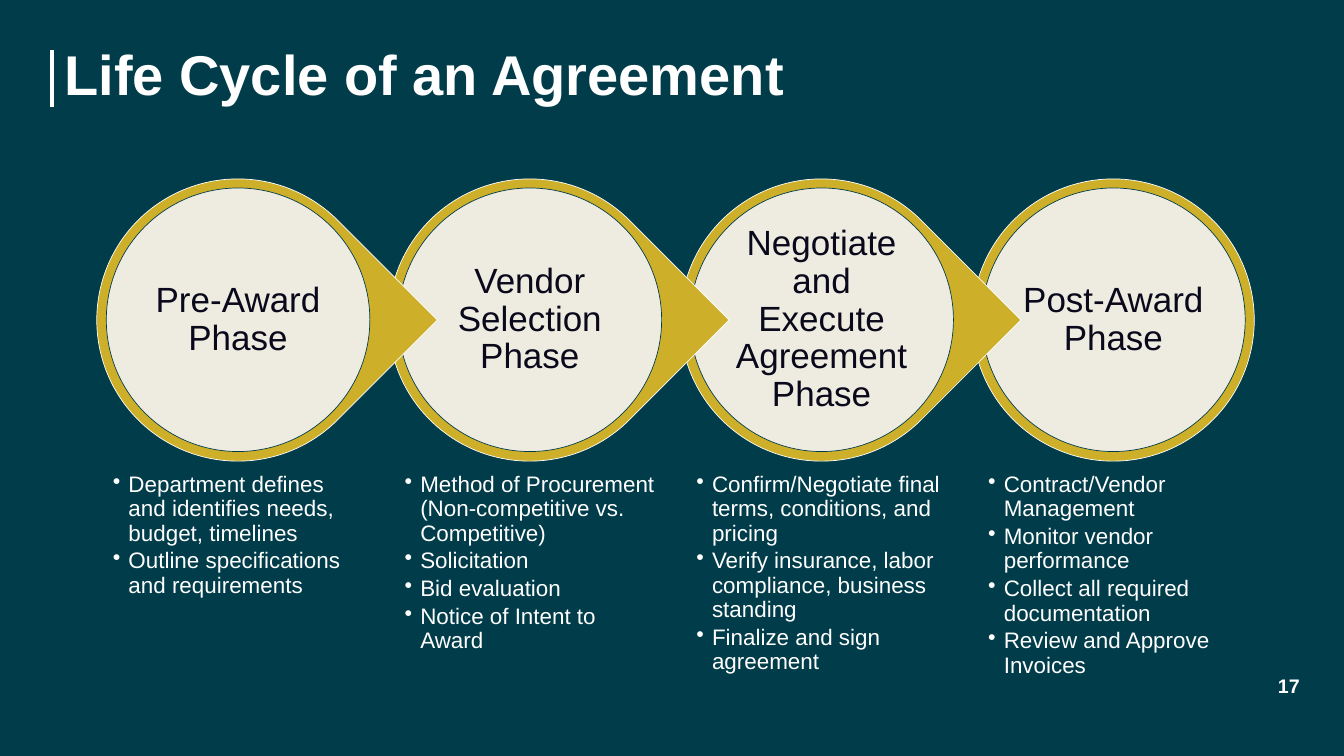
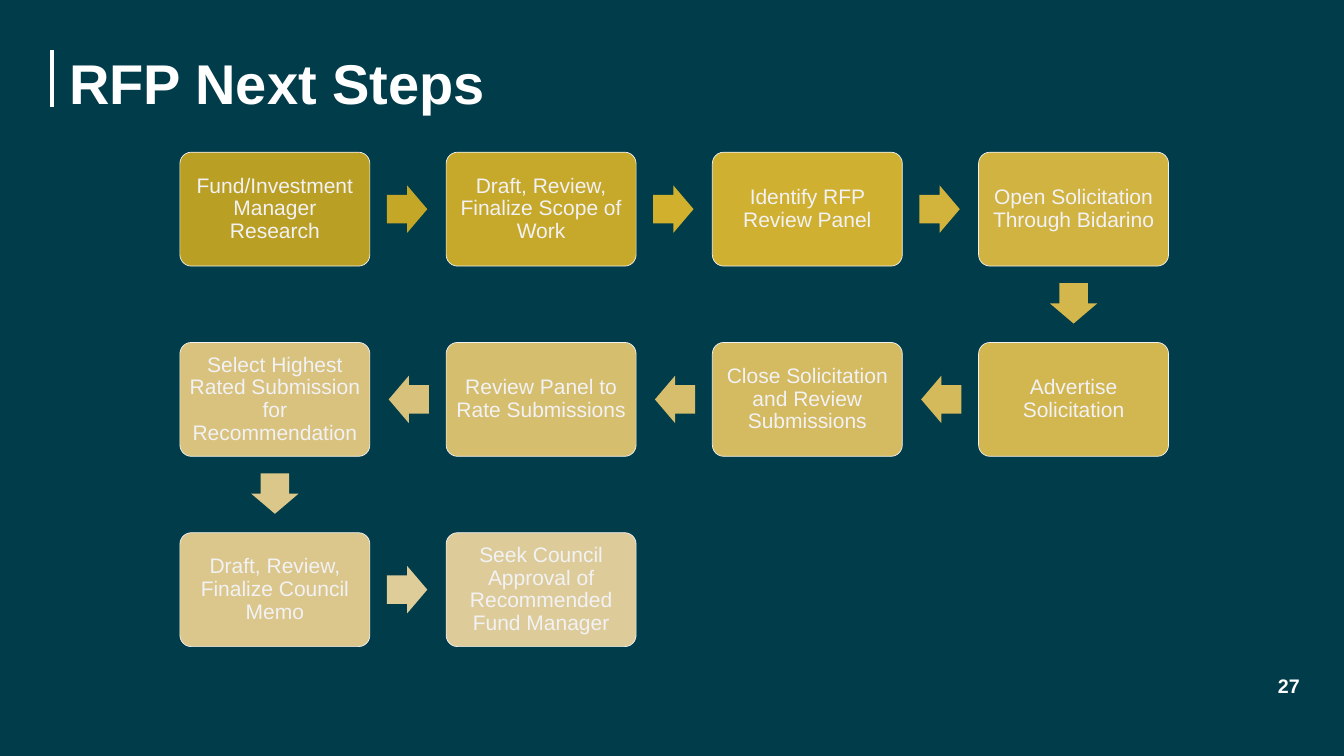
from lxml import etree
from pptx import Presentation, util as u
from pptx.dml.color import RGBColor
from pptx.enum import shapes, text
from pptx.oxml.ns import qn

# Shared style
FONT = "Arial"
TEAL, WHITE, PALE, GOLD, INK = "003C49", "FFFFFF", "F2F2F5", "CDAF29", "0A091B"
KIND, ALIGN, ANCHOR = shapes.MSO_SHAPE, text.PP_ALIGN, text.MSO_ANCHOR

# Slide 1: phases, left to right, with their tasks
PHASES = [
    ("Pre-Award Phase", [
        "Department defines and identifies needs, budget, timelines",
        "Outline specifications and requirements"]),
    ("Vendor Selection Phase", [
        "Method of Procurement (Non-competitive vs. Competitive)",
        "Solicitation", "Bid evaluation", "Notice of Intent to Award"]),
    ("Negotiate and Execute Agreement Phase", [
        "Confirm/Negotiate final terms, conditions, and pricing",
        "Verify insurance, labor compliance, business standing",
        "Finalize and sign agreement"]),
    ("Post-Award Phase", [
        "Contract/Vendor Management", "Monitor vendor performance",
        "Collect all required documentation", "Review and Approve Invoices"]),
]

# Slide 2: step, box colour, colour of the arrow to the next step
STEPS = [
    ("Fund/Investment Manager Research", "BA9F25", "C4A727"),
    ("Draft, Review, Finalize Scope of Work", "C6A82A", "D0B02D"),
    ("Identify RFP Review Panel", "D0B031", "D2B43C"),
    ("Open Solicitation Through Bidarino", "D1B341", "D3B64C"),
    ("Advertise Solicitation", "D2B650", "D5BA5C"),
    ("Close Solicitation and Review Submissions", "D4BA60", "D6BE6C"),
    ("Review Panel to Rate Submissions", "D6BE6F", "D8C27B"),
    ("Select Highest Rated Submission for Recommendation", "D8C27E", "DBC78A"),
    ("Draft, Review, Finalize Council Memo", "DBC78C", "DECC99"),
    ("Seek Council Approval of Recommended Fund Manager", "DDCC9A", None),
]


def rgb(value):
    return RGBColor.from_string(value)


def write(shape, lines, size, color=WHITE, bold=False, align=ALIGN.LEFT,
          anchor=ANCHOR.TOP, inset=(0.1, 0.05), spacing=0.9, after=0, bullet_indent=None):
    frame = shape.text_frame
    frame.word_wrap = True
    frame.auto_size = text.MSO_AUTO_SIZE.NONE
    frame.vertical_anchor = anchor
    frame.margin_left = frame.margin_right = u.Inches(inset[0])
    frame.margin_top = frame.margin_bottom = u.Inches(inset[1])
    for index, line in enumerate(lines):
        para = frame.paragraphs[0] if index == 0 else frame.add_paragraph()
        if bullet_indent:
            props = para._p.get_or_add_pPr()
            props.set("marL", str(u.Inches(bullet_indent)))
            props.set("indent", str(-u.Inches(bullet_indent)))
            etree.SubElement(props, qn("a:buChar"), char="•")
        para.alignment = align
        para.line_spacing = spacing
        para.space_before, para.space_after = u.Pt(0), u.Pt(after)
        span = para.add_run()
        span.text = line
        span.font.name, span.font.size, span.font.bold = FONT, u.Pt(size), bold
        span.font.color.rgb = rgb(color)


def add_box(page, left, top, width, height):
    return page.shapes.add_textbox(*map(u.Inches, (left, top, width, height)))


def add_shape(page, kind, left, top, width, height, fill, line=None, opacity=None):
    shape = page.shapes.add_shape(kind, *map(u.Inches, (left, top, width, height)))
    shape.shadow.inherit = False
    shape.fill.solid()
    shape.fill.fore_color.rgb = rgb(fill)
    if opacity:
        color = shape.fill._xPr.find(qn("a:solidFill"))[0]
        etree.SubElement(color, qn("a:alpha"), val=str(opacity * 1000))
    if line:
        shape.line.color.rgb = rgb(line)
        shape.line.width = u.Pt(1)
    else:
        shape.line.fill.background()
    return shape


def add_page(deck, title, number, left, top):
    page = deck.slides.add_slide(deck.slide_layouts[5])
    # Rule beside the title
    rule = page.shapes.add_connector(
        shapes.MSO_CONNECTOR.STRAIGHT, *map(u.Inches, (1.03, 1, 1.03, 2.13)))
    rule.line.color.rgb, rule.line.width = rgb(WHITE), u.Pt(5)
    etree.SubElement(rule._element.spPr, qn("a:effectLst"))
    # Title and page number
    heading = page.shapes.title
    heading.left, heading.top = u.Inches(left), u.Inches(top)
    heading.width, heading.height = u.Inches(24.06), u.Inches(1.31)
    write(heading, [title], 80, bold=True, anchor=ANCHOR.BOTTOM, inset=(0, 0))
    write(add_box(page, 23.36, 13.33, 2.53, 0.57), [number], 28,
          bold=True, align=ALIGN.RIGHT, spacing=1)
    return page


def draw_life_cycle(page):
    pitch, outer, inner = 5.79, 5.6, 5.23
    last = len(PHASES) - 1
    # Right to left, so that each point overlaps the next circle
    for column in range(last, -1, -1):
        name, tasks = PHASES[column]
        left = 1.92 + column * pitch
        kind = KIND.OVAL if column == last else KIND.TEAR
        ring = add_shape(page, kind, left, 3.55, outer, outer, GOLD, WHITE)
        if column < last:
            ring.rotation = 45
        disc = add_shape(page, KIND.OVAL, left + 0.19, 3.73, inner, inner, PALE, TEAL, opacity=90)
        write(disc, [name], 50, color=INK, align=ALIGN.CENTER,
              anchor=ANCHOR.MIDDLE, inset=(0.05, 0.05))
        write(add_box(page, left + 0.19, 9.26, inner, 3.07), tasks, 32,
              inset=(0.13, 0.13), after=5.3, bullet_indent=0.31)


def draw_next_steps(page):
    columns, width, height = 4, 3.77, 2.26
    arrow_width, arrow_height = 0.8, 0.94
    for index, (step, box_color, arrow_color) in enumerate(STEPS):
        # Odd rows run from right to left
        row, place = divmod(index, columns)
        backward = row % 2 == 1
        column = columns - 1 - place if backward else place
        left, top = 3.57 + column * 5.283, 3.02 + row * 3.775
        box = add_shape(page, KIND.ROUNDED_RECTANGLE, left, top, width, height, box_color, PALE)
        box.adjustments[0] = 0.1
        write(box, [step], 30, color=PALE, align=ALIGN.CENTER,
              anchor=ANCHOR.MIDDLE, inset=(0.12, 0.12))
        if not arrow_color:
            continue
        # Arrow centre and turn
        if place == columns - 1:
            x, y, turn = left + width / 2, top + height + 0.74, 90
        elif backward:
            x, y, turn = left - 0.74, top + height / 2, 180
        else:
            x, y, turn = left + width + 0.74, top + height / 2, 0
        arrow = add_shape(page, KIND.RIGHT_ARROW, x - arrow_width / 2, y - arrow_height / 2,
                          arrow_width, arrow_height, arrow_color)
        arrow.adjustments[0], arrow.adjustments[1] = 0.6, 0.5
        arrow.rotation = turn


def main():
    deck = Presentation()
    deck.slide_width, deck.slide_height = u.Inches(26.67), u.Inches(15)
    backdrop = deck.slide_master.background.fill
    backdrop.solid()
    backdrop.fore_color.rgb = rgb(TEAL)
    draw_life_cycle(add_page(deck, "Life Cycle of an Agreement", "17", 1.28, 0.83))
    draw_next_steps(add_page(deck, "RFP Next Steps", "27", 1.37, 1.01))
    deck.save("out.pptx")


if __name__ == "__main__":
    main()
